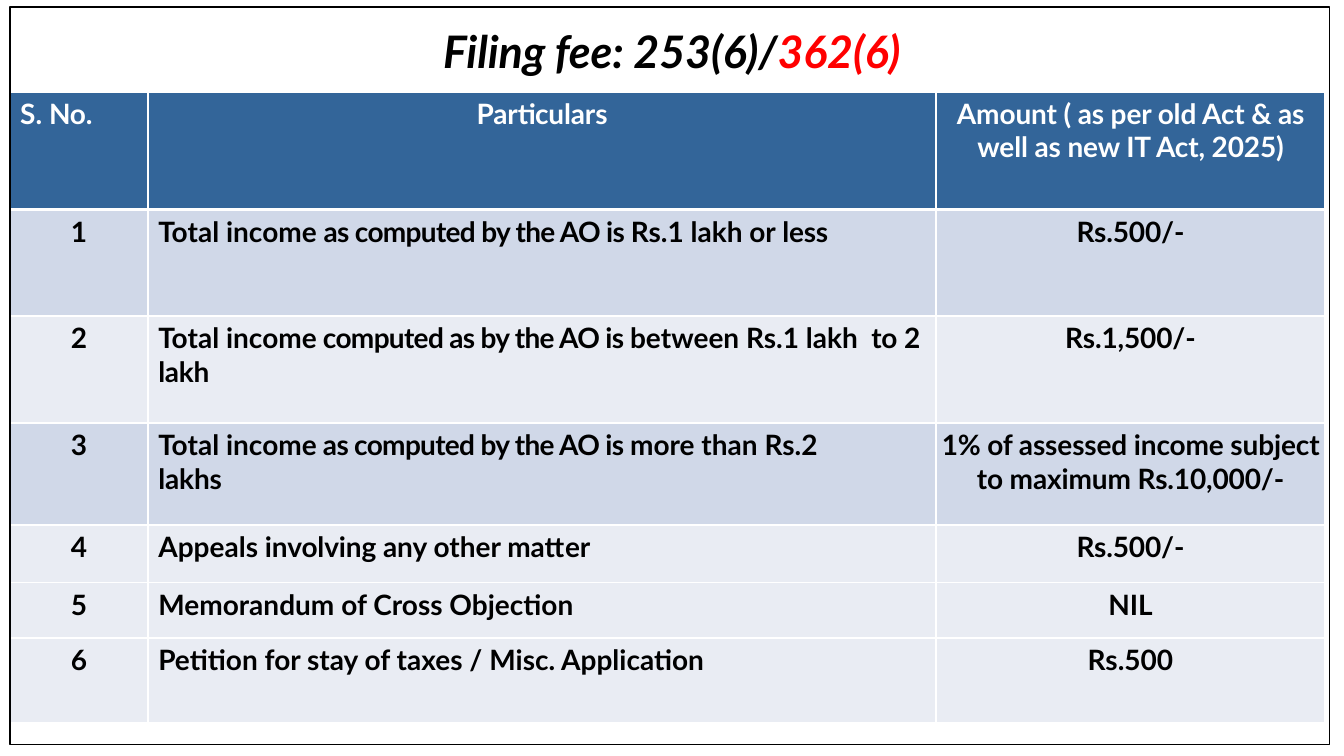
from lxml.etree import SubElement
from pptx import Presentation
from pptx.dml.color import RGBColor
from pptx.enum.shapes import MSO_SHAPE as Shape
from pptx.enum.text import MSO_ANCHOR as Anchor, PP_ALIGN as Align
from pptx.oxml.ns import qn
from pptx.util import Cm, Pt

BLACK = RGBColor(0x00, 0x00, 0x00)
WHITE = RGBColor(0xFF, 0xFF, 0xFF)
RED = RGBColor(0xFF, 0x00, 0x00)
HEADER_BLUE = RGBColor(0x33, 0x65, 0x99)
BAND_BLUE = RGBColor(0xD0, 0xD8, 0xE8)
BAND_PALE = RGBColor(0xE9, 0xEC, 0xF3)
FONT = "Lato"

COLUMN_WIDTHS = [3.48, 19.86, 9.8]
ROW_HEIGHTS = [2.97, 2.69, 2.69, 2.57, 1.45, 1.4, 2.13]
ROW_FILLS = [HEADER_BLUE, BAND_BLUE, BAND_PALE, BAND_BLUE] + [BAND_PALE] * 3

# Each cell is a list of (text, letter spacing in points).
HEADER = [
    [("S. ", 0), ("No.", -0.2)],
    [("Particulars", -0.1)],
    [("Amount ( as per old Act & as well as new IT Act, 2025)", -0.1)],
]
FEES = [
    ([("Total income ", 0), ("as computed by the AO is ", -0.5),
      ("Rs.1 lakh or ", 0), ("less", -0.2)],
     [("Rs.500/-", -0.1)]),
    ([("Total income", 0), (" computed as by the AO is ", -0.5),
      ("between Rs.1 lakh ", 0), (" to ", -0.2), ("2 ", 0), ("lakh", -0.2)],
     [("Rs.1,500/-", -0.1)]),
    ([("Total income", 0), (" as computed by the AO is ", -0.5),
      ("more than Rs.2 ", 0), ("lakhs", -0.1)],
     [("1% of assessed income subject to maximum Rs.10,000/-", -0.1)]),
    ([("Appeals ", 0), ("involving ", -0.1), ("any other ", 0), ("matter", -0.1)],
     [("Rs.500/-", -0.1)]),
    ([("Memorandum of Cross Objection", 0)], [("NIL", 0)]),
    ([("Petition for stay of taxes / Misc. Application", 0)], [("Rs.500", 0)]),
]


def add_run(paragraph, text, spacing):
    run = paragraph.add_run()
    run.text = text
    if spacing:
        run._r.get_or_add_rPr().set("spc", str(round(spacing * 100)))
    return run


def set_font(paragraph, size, color=None):
    font = paragraph.font
    font.name, font.size, font.bold = FONT, Pt(size), True
    if color is not None:
        font.color.rgb = color


def set_borders(cell, top, bottom):
    """Draw white cell borders; top and bottom widths are in points."""
    properties = cell._tc.get_or_add_tcPr()
    for side, width in (("L", 1.5), ("R", 1.5), ("T", top), ("B", bottom)):
        line = SubElement(properties, qn(f"a:ln{side}"), w=str(Pt(width)))
        fill = SubElement(line, qn("a:solidFill"))
        SubElement(fill, qn("a:srgbClr"), val=str(WHITE))


def fill_cell(cell, runs, fill, color, align):
    cell.margin_left = cell.margin_right = cell.margin_bottom = 0
    cell.margin_top = Cm(0.12)
    if align == Align.LEFT:
        cell.margin_left = Cm(0.26)
    cell.fill.solid()
    cell.fill.fore_color.rgb = fill
    paragraph = cell.text_frame.paragraphs[0]
    paragraph.alignment = align
    set_font(paragraph, 20, color)
    for text, spacing in runs:
        add_run(paragraph, text, spacing)


def add_title(slide):
    box = slide.shapes.add_textbox(Cm(6.3), Cm(0.56), Cm(21.26), Cm(1.4))
    frame = box.text_frame
    frame.word_wrap = True
    frame.vertical_anchor = Anchor.MIDDLE
    frame.margin_left = frame.margin_right = frame.margin_bottom = 0
    frame.margin_top = Cm(0.03)
    paragraph = frame.paragraphs[0]
    paragraph.alignment = Align.CENTER
    set_font(paragraph, 32)
    paragraph.font.italic = True
    for text, color in (("Filing fee: 253(6)/", BLACK), ("362(6)", RED)):
        add_run(paragraph, text, -0.1).font.color.rgb = color


def add_fee_table(slide):
    rows = [HEADER] + [
        [[(str(number), -0.5)], particulars, amount]
        for number, (particulars, amount) in enumerate(FEES, 1)
    ]
    table = slide.shapes.add_table(
        len(rows), len(COLUMN_WIDTHS), Cm(0.25), Cm(2.31),
        Cm(sum(COLUMN_WIDTHS)), Cm(sum(ROW_HEIGHTS))).table
    for column, width in zip(table.columns, COLUMN_WIDTHS):
        column.width = Cm(width)
    for row, height in zip(table.rows, ROW_HEIGHTS):
        row.height = Cm(height)

    for row_index, row in enumerate(rows):
        is_header = row_index == 0
        left_column = 0 if is_header else 1
        for column_index, runs in enumerate(row):
            cell = table.cell(row_index, column_index)
            set_borders(cell, top=3 if row_index == 1 else 1.5,
                        bottom=3 if is_header else 1.5)
            fill_cell(cell, runs, ROW_FILLS[row_index],
                      WHITE if is_header else BLACK,
                      Align.LEFT if column_index == left_column else Align.CENTER)
    table.cell(3, 1).margin_right = Cm(2)


def add_frame(slide):
    frame = slide.shapes.add_shape(
        Shape.RECTANGLE, Cm(0.25), Cm(0.18), Cm(33.25), Cm(18.59))
    frame.shadow.inherit = False
    frame.fill.background()
    frame.line.color.rgb = BLACK
    frame.line.width = Pt(0.96)


def main():
    presentation = Presentation()
    presentation.slide_width, presentation.slide_height = Cm(33.87), Cm(19.05)
    slide = presentation.slides.add_slide(presentation.slide_layouts[6])
    add_title(slide)
    add_fee_table(slide)
    add_frame(slide)
    presentation.save("out.pptx")


if __name__ == "__main__":
    main()
